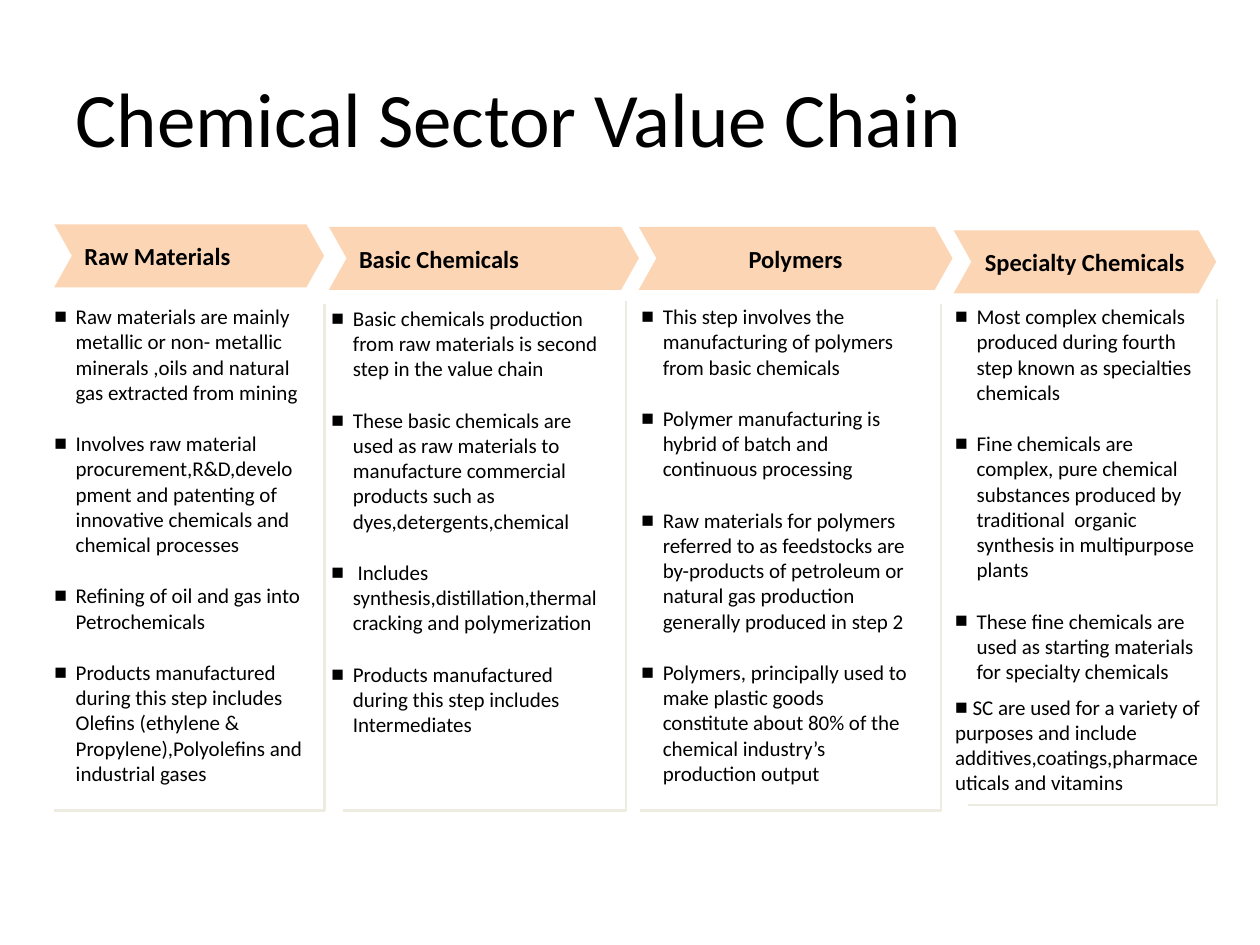
import dataclasses
import typing

import lxml.etree
import pptx
import pptx.dml.color
import pptx.enum.shapes
import pptx.enum.text
import pptx.oxml.ns
import pptx.util

Pt = pptx.util.Pt
Align = pptx.enum.text.PP_ALIGN
Anchor = pptx.enum.text.MSO_ANCHOR
qn = pptx.oxml.ns.qn


@dataclasses.dataclass(frozen=True)
class Theme:
    font: str = "Calibri"
    ink: str = "000000"
    peach: str = "FCD5B5"
    rule: str = "EEECE1"
    title: float = 44
    head: float = 14
    body: float = 12


class Box(typing.NamedTuple):
    left: float
    top: float
    width: float
    height: float


@dataclasses.dataclass(frozen=True)
class Step:
    head: str
    align: Align
    arrow: Box
    frame: Box
    text: Box
    items: tuple[str, ...]
    last: str = ""  # closing item, set flush without a hanging indent


THEME = Theme()
HANG = 12.24
GAP = 15

STEPS = (
    Step("Raw Materials", Align.LEFT,
         Box(31, 128.2, 154.2, 36), Box(31, 173.5, 154.5, 289.5),
         Box(31, 173.5, 141.8, 278),
         ("Raw materials are mainly metallic or non- metallic minerals ,oils "
          "and natural gas extracted from mining",
          "Involves raw material procurement,R&D,development and patenting of "
          "innovative chemicals and chemical processes",
          "Refining of oil and gas into Petrochemicals",
          "Products manufactured during this step includes Olefins (ethylene & "
          "Propylene),Polyolefins and industrial gases")),
    Step("Basic Chemicals", Align.LEFT,
         Box(188, 129.6, 177.1, 36), Box(195.8, 172, 162, 291),
         Box(189.4, 174.5, 153.4, 249),
         ("Basic chemicals production from raw materials is second step in the "
          "value chain",
          "These basic chemicals are used as raw materials to manufacture "
          "commercial products such as dyes,detergents,chemical",
          " Includes synthesis,distillation,thermal cracking and polymerization",
          "Products manufactured during this step includes Intermediates")),
    Step("Polymers", Align.CENTER,
         Box(365, 129.6, 179.3, 36), Box(365.8, 173.5, 172, 289.5),
         Box(366.5, 173.5, 152.6, 307),
         ("This step involves the manufacturing of polymers from basic chemicals",
          "Polymer manufacturing is hybrid of batch and continuous processing",
          "Raw materials for polymers referred to as feedstocks are by-products "
          "of petroleum or natural gas production generally produced in step 2",
          "Polymers, principally used to make plastic goods constitute about 80% "
          "of the chemical industry’s production output")),
    Step("Specialty Chemicals", Align.CENTER,
         Box(545, 131.6, 150, 36), Box(553, 170.6, 142.5, 289.5),
         Box(545.8, 173.5, 143.3, 313),
         ("Most complex chemicals produced during fourth step known as "
          "specialties chemicals",
          "Fine chemicals are complex, pure chemical substances produced by "
          "traditional  organic synthesis in multipurpose plants",
          "These fine chemicals are used as starting materials for specialty "
          "chemicals"),
         " SC are used for a variety of purposes and include "
         "additives,coatings,pharmaceuticals and vitamins"),
)


def tint(code: str) -> pptx.dml.color.RGBColor:
    return pptx.dml.color.RGBColor.from_string(code)


def place(shape, box: Box) -> None:
    shape.left, shape.top, shape.width, shape.height = map(Pt, box)


def write(para, text: str, size: float, bold: bool = False) -> None:
    run = para.add_run()
    run.text = text
    run.font.name = THEME.font
    run.font.size = Pt(size)
    run.font.bold = bold
    run.font.color.rgb = tint(THEME.ink)


def mark(para, hang: float) -> None:
    """Give a paragraph a square bullet and a hanging indent."""
    props = para._p.get_or_add_pPr()
    props.set("marL", str(Pt(hang)))
    props.set("indent", str(-Pt(hang)))
    color = lxml.etree.SubElement(props, qn("a:buClr"))
    lxml.etree.SubElement(color, qn("a:srgbClr"), val=THEME.ink)
    lxml.etree.SubElement(props, qn("a:buChar"), char="■")


def draw_arrow(slide, step: Step) -> None:
    shape = slide.shapes.add_shape(
        pptx.enum.shapes.MSO_SHAPE.CHEVRON, *map(Pt, step.arrow))
    shape.adjustments[0] = 0.281
    shape.shadow.inherit = False
    shape.fill.solid()
    shape.fill.fore_color.rgb = tint(THEME.peach)
    shape.line.fill.background()
    frame = shape.text_frame
    frame.word_wrap = True
    frame.vertical_anchor = Anchor.MIDDLE
    frame.margin_left = frame.margin_right = Pt(7.2)
    frame.margin_top = frame.margin_bottom = Pt(7.2)
    para = frame.paragraphs[0]
    para.alignment = step.align
    write(para, step.head, THEME.head, True)


def draw_frame(slide, box: Box) -> None:
    """Draw the right and bottom edges of a column."""
    right, low = box.left + box.width, box.top + box.height
    path = slide.shapes.build_freeform(Pt(right), Pt(box.top))
    path.add_line_segments(
        [(Pt(right), Pt(low)), (Pt(box.left), Pt(low))], close=False)
    shape = path.convert_to_shape()
    shape.shadow.inherit = False
    shape.fill.background()
    shape.line.color.rgb = tint(THEME.rule)
    shape.line.width = Pt(1.5)


def fill_list(holder, step: Step) -> None:
    place(holder, step.text)
    frame = holder.text_frame
    frame.word_wrap = True
    frame.auto_size = pptx.enum.text.MSO_AUTO_SIZE.NONE
    frame.vertical_anchor = Anchor.TOP
    frame.margin_left = frame.margin_right = 0
    frame.margin_top = frame.margin_bottom = 0
    rows = [(item, HANG, GAP) for item in step.items]
    if step.last:
        rows.append((step.last, 0, 6))
    for num, (text, hang, gap) in enumerate(rows):
        para = frame.add_paragraph() if num else frame.paragraphs[0]
        para.level = 1
        para.alignment = Align.LEFT
        para.space_before = Pt(gap)
        mark(para, hang)
        write(para, text, THEME.body)


def main() -> None:
    deck = pptx.Presentation()
    deck.slide_width, deck.slide_height = Pt(720), Pt(540)
    # The comparison layout holds a title and four body placeholders
    slide = deck.slides.add_slide(deck.slide_layouts[4])

    # Title
    title = slide.shapes.title
    place(title, Box(36, 21.6, 648, 90))
    title.text_frame.vertical_anchor = Anchor.MIDDLE
    para = title.text_frame.paragraphs[0]
    para.alignment = Align.LEFT
    write(para, "Chemical Sector Value Chain", THEME.title)

    # Columns of the value chain
    for num, step in enumerate(STEPS, 1):
        draw_arrow(slide, step)
        draw_frame(slide, step.frame)
        fill_list(slide.placeholders[num], step)

    deck.save("out.pptx")


if __name__ == "__main__":
    main()
